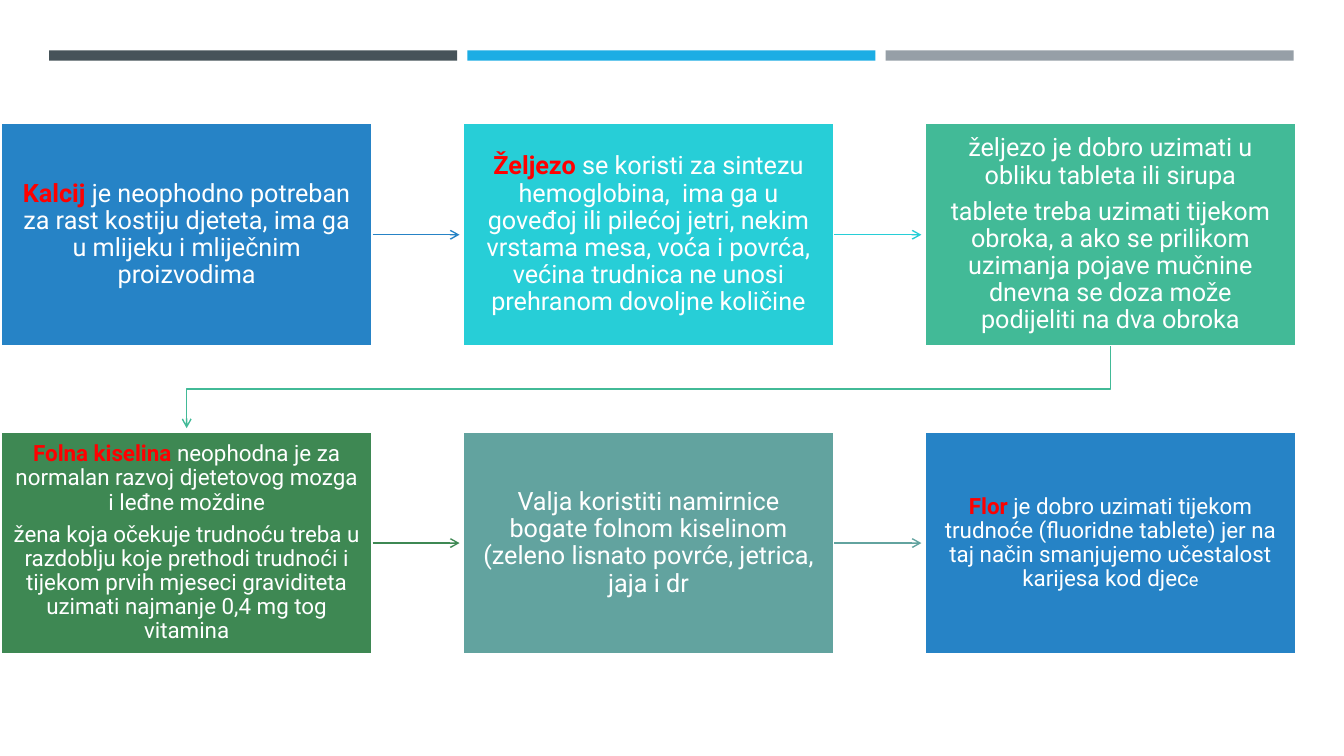
from lxml.etree import SubElement
from pptx import Presentation
from pptx.dml.color import RGBColor
from pptx.enum.shapes import MSO_CONNECTOR, MSO_SHAPE
from pptx.enum.text import MSO_ANCHOR, PP_ALIGN
from pptx.oxml.ns import qn
from pptx.util import Cm, Pt


def paint(part, color):
    """Give a fill, or the fill of a line, one solid colour."""
    part.solid()
    part.fore_color.rgb = RGBColor.from_string(color)


def point(shape, color):
    """Style a line as a thin arrow with an open head."""
    paint(shape.line.fill, color)
    shape.line.width = Pt(1)
    SubElement(shape.line._get_or_add_ln(), qn("a:tailEnd"), type="arrow")


deck = Presentation()
deck.slide_width, deck.slide_height = Cm(33.87), Cm(19.05)
slide = deck.slides.add_slide(deck.slide_layouts[6])
shapes = slide.shapes

# Header bars
for i, color in enumerate(["465359", "1CADE4", "969FA7"]):
    bar = shapes.add_shape(MSO_SHAPE.RECTANGLE, Cm(1.24 + 10.54 * i), Cm(1.27),
                           Cm(10.28), Cm(0.26))
    bar.shadow.inherit = False
    paint(bar.fill, color)
    bar.line.fill.background()

# Each step: fill, text size, inset, paragraphs as lists of (text, is key term)
steps = [
    ("2683C6", 18, 0.36, [[
        ("Kalcij ", True),
        ("je neophodno potreban za rast kostiju djeteta, ima ga u mlijeku i "
         "mliječnim proizvodima", False)]]),
    ("27CED7", 18, 0.36, [[
        ("Željezo ", True),
        ("se koristi za sintezu hemoglobina,  ima ga u goveđoj ili pilećoj "
         "jetri, nekim vrstama mesa, voća i povrća, većina trudnica ne unosi "
         "prehranom dovoljne količine", False)]]),
    ("42BA97", 18, 0.36, [
        [("željezo je dobro uzimati u obliku tableta ili sirupa", False)],
        [("tablete treba uzimati tijekom obroka, a ako se prilikom uzimanja "
          "pojave mučnine dnevna se doza može podijeliti na dva obroka",
          False)]]),
    ("3E8853", 16, 0.31, [
        [("Folna kiselina ", True),
         ("neophodna je za normalan razvoj djetetovog mozga i leđne moždine",
          False)],
        [("žena koja očekuje trudnoću treba u razdoblju koje prethodi trudnoći "
          "i tijekom prvih mjeseci graviditeta uzimati najmanje 0,4 mg tog "
          "vitamina", False)]]),
    ("62A39F", 18, 0.36, [[
        ("Valja koristiti namirnice bogate folnom kiselinom (zeleno lisnato "
         "povrće, jetrica, jaja i dr", False)]]),
    ("2683C6", 16, 0.31, [[
        ("Flor ", True),
        ("je dobro uzimati tijekom trudnoće (fluoridne tablete) jer na taj "
         "način smanjujemo učestalost karijesa kod djec", False),
        ("e", False)]]),
]

wide, high = Cm(9.37), Cm(5.63)
boxes = []
for i, (color, size, inset, paras) in enumerate(steps):
    row, col = divmod(i, 3)
    box = shapes.add_shape(MSO_SHAPE.RECTANGLE, Cm(0.02 + 11.64 * col),
                           Cm(3.1 + 7.77 * row), wide, high)
    box.shadow.inherit = False
    paint(box.fill, color)
    paint(box.line.fill, "FFFFFF")
    box.line.width = Pt(1.75)
    frame = box.text_frame
    frame.word_wrap = True
    frame.vertical_anchor = MSO_ANCHOR.MIDDLE
    frame.margin_left = frame.margin_right = Cm(inset)
    frame.margin_top = frame.margin_bottom = Cm(inset)
    for j, parts in enumerate(paras):
        para = frame.add_paragraph() if j else frame.paragraphs[0]
        para.alignment = PP_ALIGN.CENTER
        para.line_spacing = 0.9
        para.space_after = Pt(round(0.35 * size, 1))
        para.font.name = "Roboto"
        para.font.size = Pt(size)
        for text, key in parts:
            run = para.add_run()
            run.text = text
            run.font.bold = key
            paint(run.font.fill, "FF0000" if key else "FFFFFF")
    boxes.append(box)
run.font.size = Pt(13)  # the closing letter of the last step is smaller

# Arrows within each row
for i in (0, 1, 3, 4):
    box = boxes[i]
    mid = box.top + high // 2
    arrow = shapes.add_connector(MSO_CONNECTOR.STRAIGHT, box.left + wide, mid,
                                 boxes[i + 1].left - Cm(0.08), mid)
    arrow.begin_connect(box, 3)
    point(arrow, steps[i][0])
    SubElement(arrow._element.spPr, qn("a:effectLst"))

# Bent arrow from the end of the first row to the start of the second
last, first = boxes[2], boxes[3]
start, end = last.left + wide // 2, first.left + wide // 2
bend = (last.top + high + first.top) // 2
pen = shapes.build_freeform(start, last.top + high)
pen.add_line_segments([(start, bend), (end, bend), (end, first.top - Cm(0.08))],
                      close=False)
turn = pen.convert_to_shape()
turn.shadow.inherit = False
turn.fill.background()
point(turn, steps[2][0])

deck.save("out.pptx")
